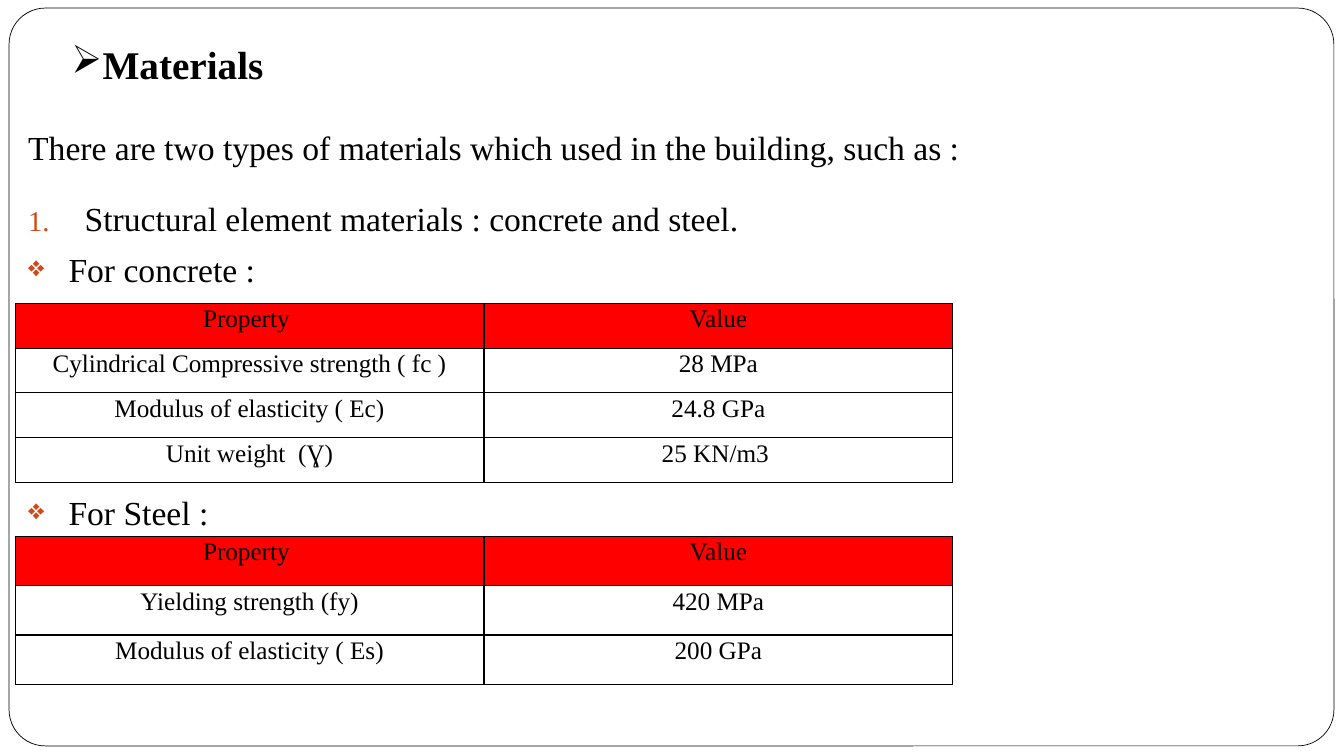
"""Build the building materials slide with its two property tables."""
from dataclasses import dataclass
from typing import Optional

from lxml import etree
from pptx import Presentation
from pptx import util as u
from pptx.dml.color import RGBColor
from pptx.enum import shapes, text
from pptx.oxml.ns import qn


@dataclass(frozen=True)
class Theme:
    """Colours, font and type sizes of the slide."""
    font: str = "Times New Roman"
    black: str = "000000"
    white: str = "FFFFFF"
    header: str = "FF0000"
    bullet: str = "D34817"
    title_size: float = 28
    body_size: float = 24
    table_size: float = 18


@dataclass(frozen=True)
class Bullet:
    """A list marker: a character, or automatic numbers when it is empty."""
    character: str = ""
    color: Optional[str] = None
    percent: int = 100
    indent: float = 0


@dataclass(frozen=True)
class BodyLine:
    """One paragraph of the body text."""
    content: str
    bullet: Optional[Bullet] = None
    line_spacing: float = 1.0
    space_before: float = 7.7


@dataclass(frozen=True)
class PropertyTable:
    """A two-column table of material properties."""
    top: float
    row_height: float
    rows: tuple[tuple[str, str], ...]


THEME = Theme()
TABLE_LEFT, COLUMN_WIDTH = 0.15, 4.65
HEADER = ("Property ", "Value")
NUMBER = Bullet(color=THEME.bullet, percent=85, indent=0.56)
DIAMOND = Bullet("❖", THEME.bullet, 85, 0.4)
BODY = (
    BodyLine("There are two types of materials which used in the building, such as :", line_spacing=1.5),
    BodyLine("Structural element materials : concrete and steel.", NUMBER, 1.5),
    BodyLine("For concrete :", DIAMOND),
    BodyLine("For Steel :", DIAMOND, space_before=144.5),
)
TABLES = (
    PropertyTable(3.01, 0.444, (
        HEADER,
        ("Cylindrical Compressive strength ( fc )", "28 MPa"),
        ("Modulus of elasticity ( Ec)", "24.8 GPa"),
        ("Unit weight  (Ɣ)", "25 KN/m3 "),
    )),
    PropertyTable(5.32, 0.49, (
        HEADER,
        ("Yielding strength (fy)", "420 MPa"),
        ("Modulus of elasticity ( Es)", "200 GPa"),
    )),
)


def add_bullet(paragraph, bullet: Bullet) -> None:
    """Give a paragraph its list marker and hanging indent."""
    properties = paragraph._p.get_or_add_pPr()
    properties.set("marL", str(u.Inches(bullet.indent)))
    properties.set("indent", str(-u.Inches(bullet.indent)))
    if bullet.color:
        color = etree.SubElement(properties, qn("a:buClr"))
        etree.SubElement(color, qn("a:srgbClr"), val=bullet.color)
    etree.SubElement(properties, qn("a:buSzPct"), val=str(bullet.percent * 1000))
    if bullet.character:
        etree.SubElement(properties, qn("a:buChar"), char=bullet.character)
    else:
        etree.SubElement(properties, qn("a:buAutoNum"), type="arabicPeriod")


def write_text(paragraph, content: str, *, size: float, bold: bool = False,
               align: text.PP_ALIGN = text.PP_ALIGN.LEFT, line_spacing: float = 1.0,
               space_before: float = 0, bullet: Optional[Bullet] = None) -> None:
    """Write one formatted paragraph."""
    paragraph.alignment = align
    paragraph.line_spacing = line_spacing
    paragraph.space_before = u.Pt(space_before)
    if bullet:
        add_bullet(paragraph, bullet)
    run = paragraph.add_run()
    run.text = content
    run.font.name = THEME.font
    run.font.size = u.Pt(size)
    run.font.bold = bold
    run.font.color.rgb = RGBColor.from_string(THEME.black)


def add_frame(slide) -> None:
    """Draw the rounded border of the slide."""
    frame = slide.shapes.add_shape(shapes.MSO_SHAPE.ROUNDED_RECTANGLE, u.Inches(0.09),
                                   u.Inches(0.08), u.Inches(13.14), u.Inches(7.32))
    frame.adjustments[0] = 0.049
    frame.shadow.inherit = False
    frame.fill.solid()
    frame.fill.fore_color.rgb = RGBColor.from_string(THEME.white)
    frame.line.color.rgb = RGBColor.from_string(THEME.black)
    frame.line.width = u.Pt(0.5)


def add_title(slide) -> None:
    """Add the slide heading."""
    box = slide.shapes.add_textbox(u.Inches(0.61), u.Inches(0.35), u.Inches(2.15), u.Inches(1.35))
    box.text_frame.word_wrap = False
    write_text(box.text_frame.paragraphs[0], "Materials", size=THEME.title_size,
               bold=True, bullet=Bullet("➢"))


def add_body(slide) -> None:
    """Add the introduction and the list around the tables."""
    box = slide.shapes.add_textbox(u.Inches(0.15), u.Inches(0.99), u.Inches(12.04), u.Inches(6.33))
    frame = box.text_frame
    frame.word_wrap = True
    frame.margin_left = frame.margin_right = u.Inches(0.13)
    frame.margin_top = frame.margin_bottom = u.Inches(0.07)
    for index, line in enumerate(BODY):
        paragraph = frame.add_paragraph() if index else frame.paragraphs[0]
        write_text(paragraph, line.content, size=THEME.body_size, bullet=line.bullet,
                   line_spacing=line.line_spacing, space_before=line.space_before)


def add_borders(cell) -> None:
    """Draw a thin line on all four sides of a cell."""
    properties = cell._tc.get_or_add_tcPr()
    for side in ("lnL", "lnR", "lnT", "lnB"):
        line = etree.SubElement(properties, qn(f"a:{side}"), w=str(u.Pt(1)))
        fill = etree.SubElement(line, qn("a:solidFill"))
        etree.SubElement(fill, qn("a:srgbClr"), val=THEME.black)


def add_property_table(slide, data: PropertyTable) -> None:
    """Add one table of material properties."""
    columns = len(HEADER)
    table = slide.shapes.add_table(
        len(data.rows), columns, u.Inches(TABLE_LEFT), u.Inches(data.top),
        u.Inches(columns * COLUMN_WIDTH), u.Inches(len(data.rows) * data.row_height)).table
    table.horz_banding = False
    table.first_row = False
    for row_index, values in enumerate(data.rows):
        table.rows[row_index].height = u.Inches(data.row_height)
        for column_index, value in enumerate(values):
            cell = table.cell(row_index, column_index)
            cell.margin_left = cell.margin_right = u.Inches(0.07)
            cell.margin_top = cell.margin_bottom = 0
            add_borders(cell)
            cell.fill.solid()
            color = THEME.white if row_index else THEME.header
            cell.fill.fore_color.rgb = RGBColor.from_string(color)
            write_text(cell.text_frame.paragraphs[0], value, size=THEME.table_size,
                       align=text.PP_ALIGN.CENTER, line_spacing=1.07)


def main() -> None:
    """Build and save the presentation."""
    presentation = Presentation()
    presentation.slide_width, presentation.slide_height = u.Inches(13.33), u.Inches(7.5)
    slide = presentation.slides.add_slide(presentation.slide_layouts[6])
    add_frame(slide)
    add_body(slide)
    add_title(slide)
    for data in TABLES:
        add_property_table(slide, data)
    presentation.save("out.pptx")


if __name__ == "__main__":
    main()
